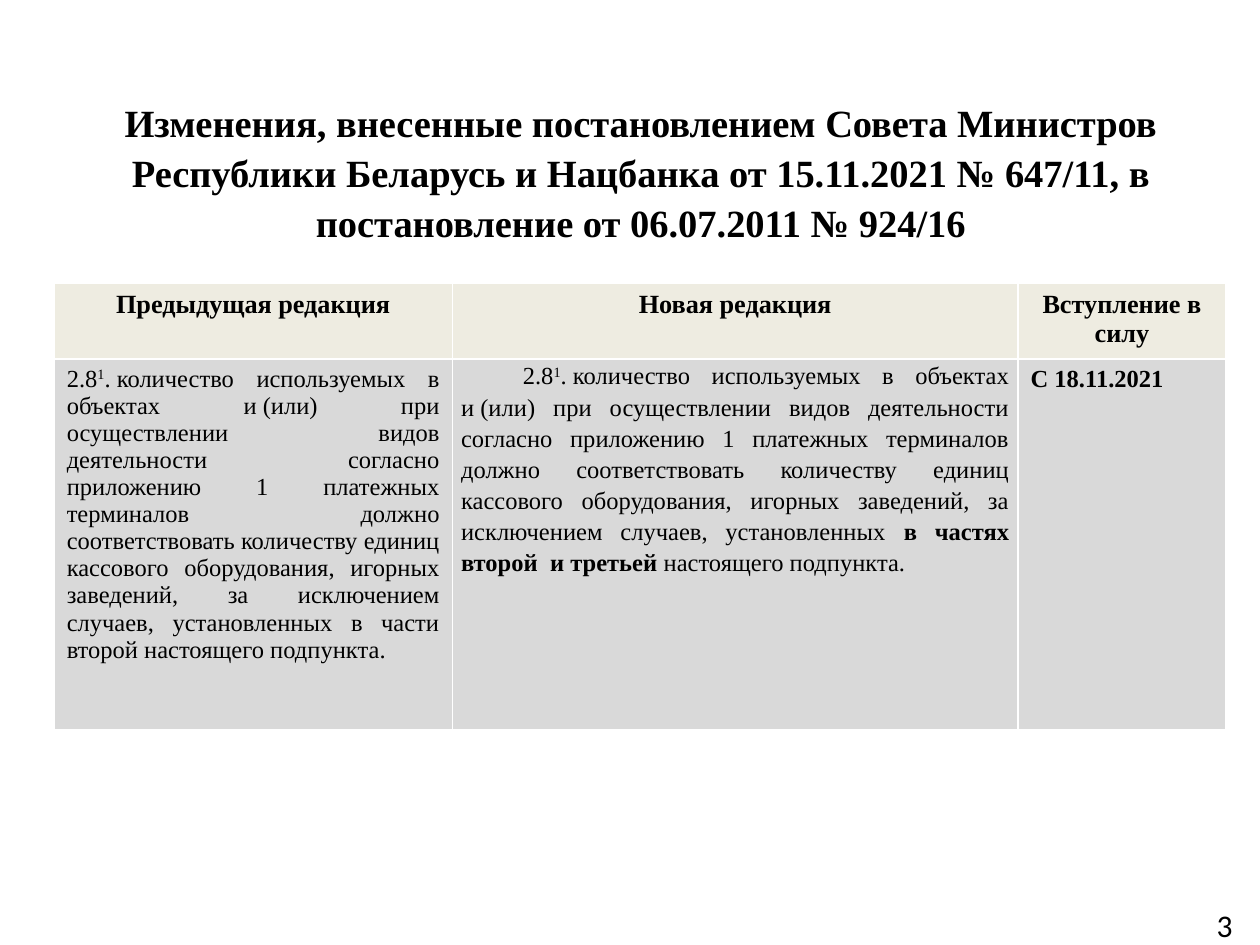
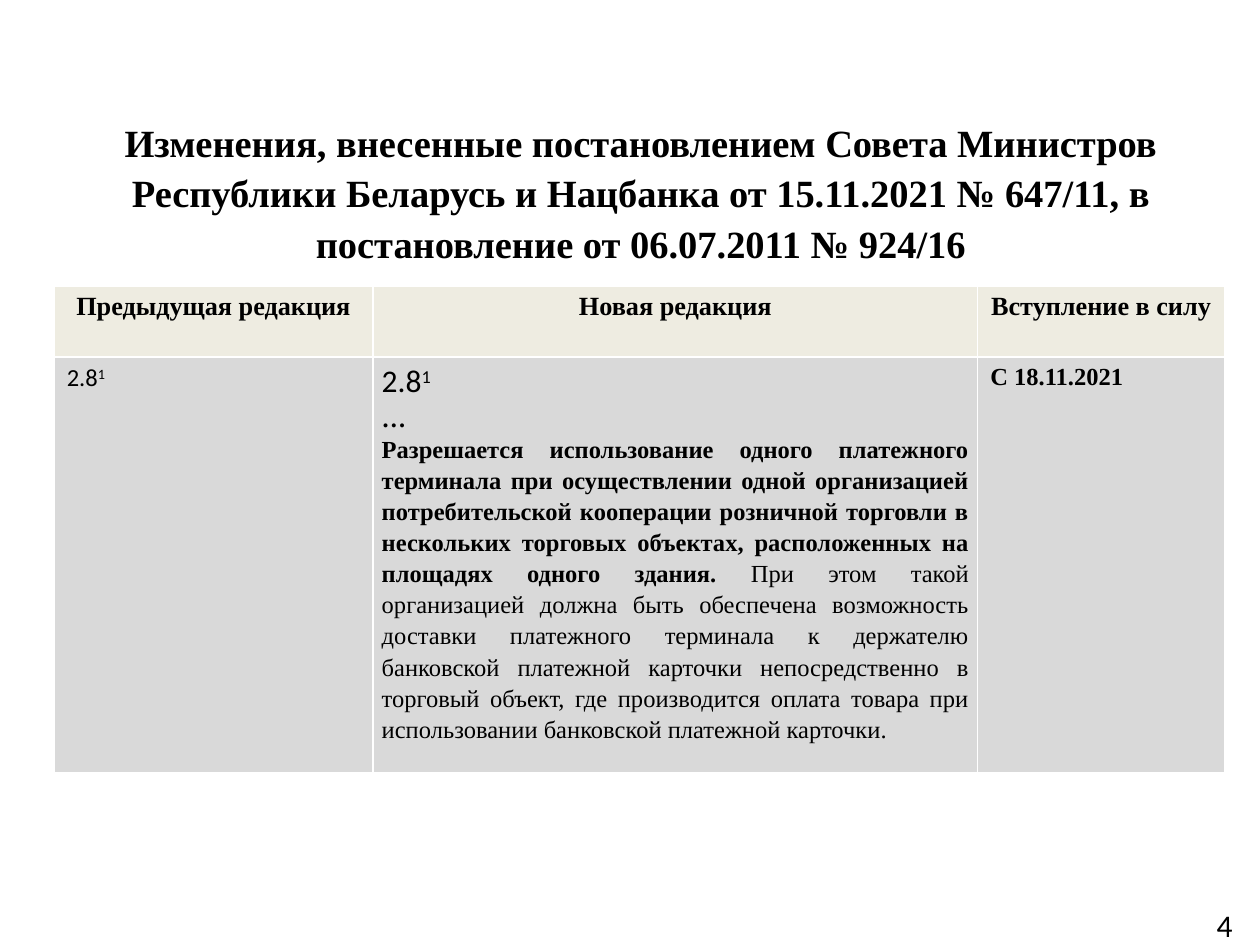
import pptx
import pptx.dml.color
import pptx.enum.text
import pptx.util

ALIGN = pptx.enum.text.PP_ALIGN
ANCHOR = pptx.enum.text.MSO_ANCHOR
BLACK = pptx.dml.color.RGBColor(0x00, 0x00, 0x00)
CREAM = pptx.dml.color.RGBColor(0xEE, 0xEC, 0xE1)
GREY = pptx.dml.color.RGBColor(0xD9, 0xD9, 0xD9)
SERIF = "Times New Roman"
SANS = "Calibri"

WIDTH = pptx.util.Inches(10)
HEIGHT = pptx.util.Inches(7.5)
LEFT = 4.3

TITLE = ("Изменения, внесенные постановлением Совета Министров "
         "Республики Беларусь и Нацбанка от 15.11.2021 № 647/11, "
         "в постановление от 06.07.2011 № 924/16")
HEADS = ("Предыдущая редакция", "Новая редакция", "Вступление в силу")
START = "С 18.11.2021"
RULE = (".\u00a0количество используемых в объектах и\u00a0(или) при "
        "осуществлении видов деятельности согласно приложению 1 платежных "
        "терминалов должно соответствовать количеству единиц кассового "
        "оборудования, игорных заведений, за исключением случаев, "
        "установленных ")
PERMIT = ("Разрешается использование одного платежного терминала при "
          "осуществлении одной организацией потребительской кооперации "
          "розничной торговли в нескольких торговых объектах, расположенных "
          "на площадях одного здания. ")
DUTY = ("При этом такой организацией должна быть обеспечена возможность "
        "доставки платежного терминала к держателю банковской платежной "
        "карточки непосредственно в торговый объект, где производится оплата "
        "товара при использовании банковской платежной карточки.")
CLAUSE = (("2.8", ""), ("1", "super"))


def across(share):
    """Length for a percentage of the slide's width."""
    return int(WIDTH * share / 100)


def down(share):
    """Length for a percentage of the slide's height."""
    return int(HEIGHT * share / 100)


def place(shape, left, top, width, height):
    shape.left, shape.top = across(left), down(top)
    shape.width, shape.height = across(width), down(height)


def style(para, size, name=SERIF, align=ALIGN.CENTER, bold=None):
    para.alignment = align
    font = para.font
    font.size, font.name, font.bold = pptx.util.Pt(size), name, bold
    font.color.rgb = BLACK


def add_title(slide, height):
    title = slide.shapes.title
    place(title, LEFT, 11.2, 93.1, height)
    frame = title.text_frame
    frame.auto_size = pptx.enum.text.MSO_AUTO_SIZE.NONE
    frame.vertical_anchor = ANCHOR.MIDDLE
    frame.text = TITLE
    para = frame.paragraphs[0]
    style(para, 22, bold=True)
    para.line_spacing = 1.09


def add_number(slide, number):
    box = slide.shapes.add_textbox(0, 0, 0, 0)
    place(box, 94.4, 95.7, 5.6, 4.3)
    frame = box.text_frame
    frame.word_wrap = True
    frame.vertical_anchor = ANCHOR.MIDDLE
    frame.text = str(number)
    style(frame.paragraphs[0], 18, SANS)


def add_table(slide, top, widths, heights):
    """Table with its heading row filled in; sizes are percentages."""
    frame = slide.shapes.add_table(
        len(heights), len(widths), across(LEFT), down(top),
        across(sum(widths)), down(sum(heights)))
    table = frame.table
    for col, width in zip(table.columns, widths):
        col.width = across(width)
    for row, height, shade in zip(table.rows, heights, (CREAM, GREY)):
        row.height = down(height)
        for cell in row.cells:
            cell.fill.solid()
            cell.fill.fore_color.rgb = shade
    for cell, head in zip(table.rows[0].cells, HEADS):
        cell.text = head
        style(cell.text_frame.paragraphs[0], 15, bold=True)
    return table


def write(cell, runs, size=14, name=SERIF, align=ALIGN.JUSTIFY, first=True):
    """Add a paragraph of (text, mark) runs; a mark is bold, super or empty."""
    frame = cell.text_frame
    para = frame.paragraphs[0] if first else frame.add_paragraph()
    style(para, size, name, align)
    for text, mark in runs:
        run = para.add_run()
        run.text = text
        run.font.bold = mark == "bold"
        if mark == "super":
            run._r.get_or_add_rPr().set("baseline", "30000")
    return para


def tighten(cell):
    """Narrow margins and wider lines, for the new wording."""
    cell.margin_left = cell.margin_right = pptx.util.Inches(0.07)
    cell.margin_top = cell.margin_bottom = 0
    for para in cell.text_frame.paragraphs:
        para.line_spacing = 1.15


def fill_rule(table):
    old, new, date = table.rows[1].cells
    write(old, CLAUSE + ((RULE + "в части второй настоящего подпункта.", ""),))
    para = write(new, CLAUSE + (
        (RULE, ""), ("в частях второй  и третьей ", "bold"),
        ("настоящего подпункта.", "")))
    para._p.get_or_add_pPr().set("indent", str(pptx.util.Inches(0.49)))
    tighten(new)
    write(date, [(START, "bold")], align=ALIGN.LEFT)


def fill_permit(table):
    old, new, date = table.rows[1].cells
    write(old, CLAUSE, name=SANS)
    write(new, CLAUSE, 18, SANS)
    write(new, [("…", "bold")], first=False)
    write(new, [(PERMIT, "bold"), (DUTY, "")], first=False)
    tighten(new)
    write(date, [(START, "bold")], align=ALIGN.LEFT)


def main():
    deck = pptx.Presentation()
    deck.slide_width, deck.slide_height = WIDTH, HEIGHT
    plans = (
        (13.6, 30, (31.6, 44.9, 16.5), (7.5, 39.2), fill_rule),
        (17.9, 30.3, (25.3, 48, 19.6), (7.5, 40.7), fill_permit),
    )
    for number, (height, top, widths, heights, fill) in enumerate(plans, 3):
        slide = deck.slides.add_slide(deck.slide_layouts[5])
        add_title(slide, height)
        add_number(slide, number)
        fill(add_table(slide, top, widths, heights))
    deck.save("out.pptx")


if __name__ == "__main__":
    main()
